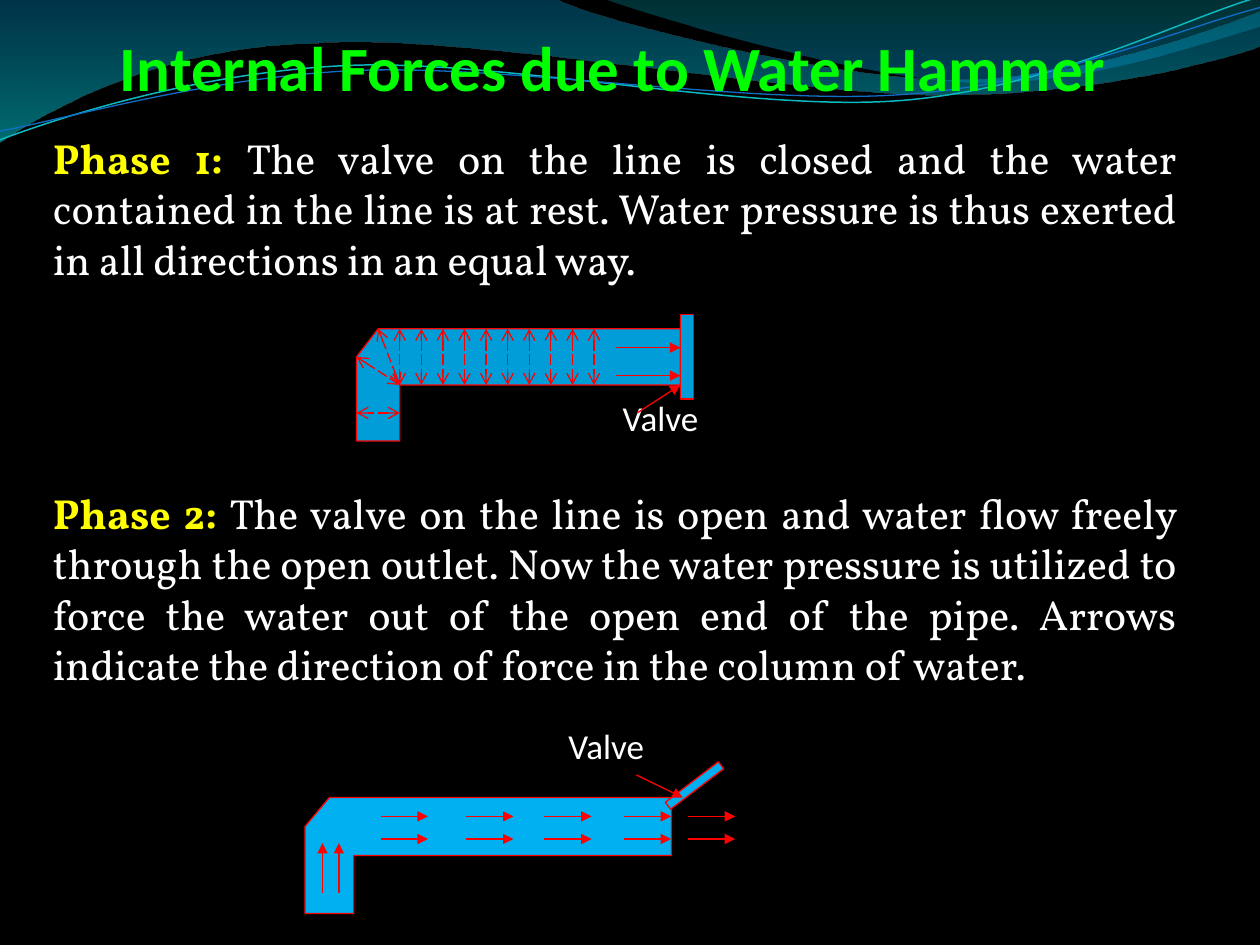
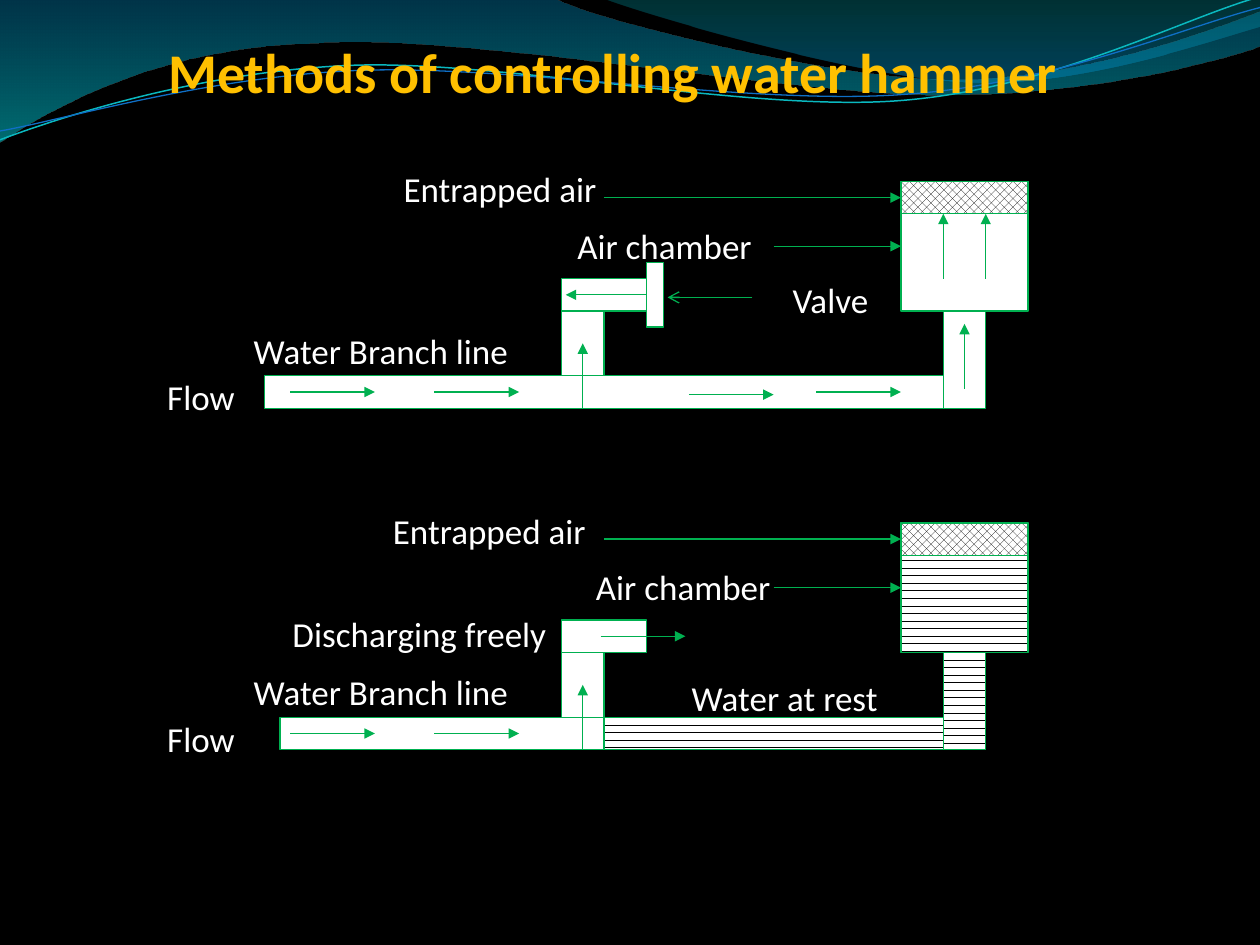
from dataclasses import dataclass

from pptx import Presentation
from pptx.dml.color import RGBColor
from pptx.enum.dml import MSO_LINE, MSO_PATTERN
from pptx.enum.shapes import MSO_CONNECTOR, MSO_SHAPE
from pptx.enum.text import MSO_ANCHOR, PP_ALIGN
from pptx.oxml.ns import qn
from pptx.oxml.xmlchemy import OxmlElement
from pptx.util import Inches, Pt

RECT = MSO_SHAPE.RECTANGLE
STRAIGHT = MSO_CONNECTOR.STRAIGHT
LONG_DASH = MSO_LINE.LONG_DASH
AIR, WATER = MSO_PATTERN.PERCENT_50, MSO_PATTERN.DASHED_HORIZONTAL
CENTER, JUSTIFY = PP_ALIGN.CENTER, PP_ALIGN.JUSTIFY
TOP, BOTTOM = MSO_ANCHOR.TOP, MSO_ANCHOR.BOTTOM
LEFT_SIDE = 1

COLORS = {
    "black": "000000", "white": "FFFFFF", "yellow": "FFFF00",
    "lime": "00FF00", "amber": "FFC000", "red": "FF0000", "green": "00B050",
    "closed": "009DD9", "open": "00B0F0", "cyan": "0AB8BF", "blue": "0F6FC6",
    "sea": "0074A1", "aqua": "00C6CF", "teal": "00A1A9", "deep": "008BBF",
}
SANS, SERIF = "Calibri", "Vollkorn"

# Wave outlines: two numbers are a straight step, six a cubic curve.
BROAD_WAVE = [(0, 0), (4.4, -0.01), (4.76, 0.17, 6.64, 0.63, 7.58, 0.63),
              (8.53, 0.63, 9.58, 0.26, 10, 0.09), (10.01, 0.36),
              (9.83, 0.44, 8.7, 0.76, 7.46, 0.75),
              (6.22, 0.75, 3.82, 0.28, 2.57, 0.34),
              (1.29, 0.36, 0.46, 0.83, -0.01, 1.13), (0, 0)]
RIGHT_WAVE = [(4.79, -0.01), (5.09, 0.11, 6.82, 0.62, 7.69, 0.65),
              (8.56, 0.69, 9.61, 0.32, 10, 0.21), (10, 0), (4.79, -0.01)]
CYAN_LINE = [(0, 1.11), (0.48, 0.93, 1.58, 0.57, 2.77, 0.52),
             (3.95, 0.47, 5.93, 0.89, 7.13, 0.8),
             (8.33, 0.71, 9.38, 0.15, 9.98, -0.02)]
BLUE_LINE = [(0, 1.04), (0.47, 0.96, 1.64, 0.61, 2.83, 0.56),
             (4.03, 0.51, 5.97, 0.84, 7.17, 0.75),
             (8.36, 0.67, 9.41, 0.21, 10, 0.06)]


@dataclass
class Grid:
    """A box in inches, divided into equal columns and rows."""
    x: float
    y: float
    w: float
    h: float
    cols: float
    rows: float

    def point(self, col, row):
        return (Inches(self.x + col * self.w / self.cols),
                Inches(self.y + row * self.h / self.rows))

    def area(self, col, row, cols, rows):
        return (*self.point(col, row),
                Inches(cols * self.w / self.cols), Inches(rows * self.h / self.rows))


PAGE = Grid(0, 0, 10, 7.5, 10, 7.5)


def rgb(name):
    return RGBColor.from_string(COLORS[name])


def paint(sp, fill=None, line=None, pattern=None, width=0.75):
    sp.shadow.inherit = False
    if pattern is not None:
        sp.fill.patterned()
        sp.fill.pattern = pattern
        sp.fill.fore_color.rgb, sp.fill.back_color.rgb = rgb("black"), rgb("white")
    elif fill:
        sp.fill.solid()
        sp.fill.fore_color.rgb = rgb(fill)
    else:
        sp.fill.background()
    if line:
        sp.line.color.rgb = rgb(line)
        sp.line.width = Pt(width)
    else:
        sp.line.fill.background()
    return sp


def block(s, grid, area, fill, line, pattern=None):
    sp = s.shapes.add_shape(RECT, *grid.area(*area))
    return paint(sp, fill, line, pattern)


def outline(s, grid, points, close=True):
    pts = [grid.point(*p) for p in points]
    fb = s.shapes.build_freeform(*pts[0])
    fb.add_line_segments(pts[1:], close=close)
    return fb.convert_to_shape()


def curved_outline(s, grid, segments, close):
    """Draw every point as a step, then join the steps of each curve in one."""
    points = [seg[i:i + 2] for seg in segments for i in range(0, len(seg), 2)]
    sp = outline(s, grid, points, close)
    steps = iter(list(sp._element.spPr.iter(qn("a:lnTo"))))
    for seg in segments[1:]:
        first = next(steps)
        if len(seg) == 6:
            curve = OxmlElement("a:cubicBezTo")
            first.addprevious(curve)
            for step in (first, next(steps), next(steps)):
                curve.append(step[0])
                step.getparent().remove(step)
    return sp


def arrow(s, grid, start, end, color, head=None, tail="triangle", dash=None):
    cx = s.shapes.add_connector(STRAIGHT, *grid.point(*start), *grid.point(*end))
    cx.line.color.rgb = rgb(color)
    cx.line.width = Pt(0.75)
    if dash is not None:
        cx.line.dash_style = dash
    ln = cx.line._get_or_add_ln()
    for tag, kind in (("a:headEnd", head), ("a:tailEnd", tail)):
        if kind:
            tip = OxmlElement(tag)
            tip.set("type", kind)
            ln.append(tip)
    cx._element.spPr.append(OxmlElement("a:effectLst"))
    return cx


def text_box(s, grid, area, anchor=TOP):
    tf = s.shapes.add_textbox(*grid.area(*area)).text_frame
    tf.word_wrap = True
    tf.vertical_anchor = anchor
    tf.margin_left = tf.margin_top = tf.margin_right = tf.margin_bottom = 0
    return tf


def add_run(p, text, size, color, font=SANS, bold=False):
    r = p.add_run()
    r.text = text
    r.font.name, r.font.size, r.font.bold = font, Pt(size), bold
    r.font.color.rgb = rgb(color)


def label(s, grid, text, mid, row, cols):
    """Write a label centred on column mid, with its top on a row."""
    tf = text_box(s, grid, (mid - cols / 2, row, cols, 0.36 * grid.rows / grid.h))
    tf.paragraphs[0].alignment = CENTER
    add_run(tf.paragraphs[0], text, 20, "white")


def waves(s, grid):
    for segments, stops in (
            (BROAD_WAVE, ((0, "sea", 45), (1, "aqua", 55))),
            (RIGHT_WAVE, ((0, "teal", 30), (0.8, "deep", 45)))):
        sp = paint(curved_outline(s, grid, segments, True))
        sp.fill.gradient()
        sp.fill.gradient_angle = 270
        for stop, (position, color, _) in zip(sp.fill.gradient_stops, stops):
            stop.position = position
            stop.color.rgb = rgb(color)
        for clr, (_, _, opacity) in zip(sp._element.spPr.iter(qn("a:srgbClr")), stops):
            alpha = OxmlElement("a:alpha")
            alpha.set("val", str(opacity * 1000))
            clr.append(alpha)
    for segments, color, width in ((CYAN_LINE, "cyan", 0.85), (BLUE_LINE, "blue", 0.75)):
        paint(curved_outline(s, grid, segments, False), line=color, width=width)


def dress_layout(s):
    """Give the slide's layout the black ground and the waves."""
    layout = s.slide_layout
    layout.background.fill.solid()
    layout.background.fill.fore_color.rgb = rgb("black")
    waves(s, PAGE)
    for sp in list(s.shapes):
        layout.shapes._spTree.append(sp._element)


def add_title(s, title, size, color):
    p = text_box(s, PAGE, (0.58, 0.08, 8.57, 0.75), BOTTOM).paragraphs[0]
    p.alignment = CENTER
    add_run(p, title, size, color, bold=True)


def phase_text(s, grid, area, phases):
    tf = text_box(s, grid, area)
    tf.margin_top, tf.margin_right = Inches(0.05), Inches(0.08)
    for i, (name, text) in enumerate(phases):
        p = tf.add_paragraph() if i else tf.paragraphs[0]
        p.alignment = JUSTIFY
        p.line_spacing = Pt(28.9)
        p.space_before = Pt(116 if i else 0)
        add_run(p, name, 24, "yellow", SERIF, True)
        add_run(p, text, 24, "white", SERIF)


def bent_pipe(s, grid, fill):
    corners = [(15, 0), (1, 0), (0, 1), (0, 4), (2, 4), (2, 2), (15, 2)]
    paint(outline(s, grid, corners), fill, "red")


def closed_pipe(s, grid):
    bent_pipe(s, grid, "closed")
    across = [((col, 0), (col, 2)) for col in range(2, 12)]
    across += [((1, 0), (2, 2)), ((0, 1), (2, 2)), ((2, 3), (0, 3))]
    for start, end in across:
        arrow(s, grid, start, end, "red", "arrow", "arrow", LONG_DASH)
    for row in (0.67, 1.67):
        arrow(s, grid, (12, row), (15, row), "red")
    block(s, grid, (15, -0.5, 0.6, 3), "closed", "red")
    label(s, grid, "Valve", 14.08, 2.4, 4)
    arrow(s, grid, (13, 3), (15, 2), "red")


def open_pipe(s, grid):
    bent_pipe(s, grid, "open")
    valve = block(s, grid, (15.76, -1.57, 0.36, 2.3), "open", "red")
    valve.rotation = 232.7
    label(s, grid, "Valve", 12.33, -2.52, 4.1)
    arrow(s, grid, (13.56, -0.78), (15.46, 0), "red")
    for col in (3.1, 6.6, 9.8, 13.05, 15.67):
        for row in (0.65, 1.43):
            arrow(s, grid, (col, row), (col + 1.93, row), "red")
    for col in (0.72, 1.39):
        arrow(s, grid, (col, 3.3), (col, 1.57), "red")


def branch_line(s, grid, main_pipe, water, labels):
    """Draw supply pipe, outlet and air chamber; water is the chamber's pattern."""
    chamber = block(s, grid, (15, 0, 3, 4), "white", "green", water)
    block(s, grid, (16, 4, 1, 3), "white", "green", water)
    for area in (main_pipe, (7, 4, 1, 2), (7, 3, 2, 1)):
        block(s, grid, area, "white", "green")
    air = block(s, grid, (15, 0, 3, 1), None, "green", AIR)
    for col, row in ((0.6, 6.5), (4, 6.5), (10, 6.58), (13, 6.5)):
        arrow(s, grid, (col, row), (col + 2, row), "green")
    arrow(s, grid, (7.5, 7), (7.5, 5), "green")
    for start, end, target in (((8, 0.5), (15, 0.5), air), ((12, 2), (15, 2), chamber)):
        arrow(s, grid, start, end, "green").end_connect(target, LEFT_SIDE)
    for words in labels + [("Water Branch line", 2.74, 4.57, 9), ("Flow", -1.5, 6, 3)]:
        label(s, grid, *words)


def closed_branch(s, grid):
    branch_line(s, grid, (0, 6, 16, 1), None,
                [("Entrapped air", 5.55, -0.43, 5.2), ("Air chamber", 9.43, 1.32, 5.1),
                 ("Valve", 13.34, 3, 3.2)])
    valve = block(s, grid, (9, 2.5, 0.4, 2), "white", "green")
    arrow(s, grid, (9, 3.5), (7.1, 3.5), "green").begin_connect(valve, LEFT_SIDE)
    arrow(s, grid, (11.5, 3.58), (9.5, 3.58), "green", tail="arrow")
    for start, end in (((16.5, 6.4), (16.5, 4.4)), ((16, 3), (16, 1)), ((17, 3), (17, 1))):
        arrow(s, grid, start, end, "green")


def open_branch(s, grid):
    branch_line(s, grid, (0.36, 6, 7.64, 1), WATER,
                [("Entrapped air", 5.3, -0.41, 5.7), ("Air chamber", 9.87, 1.32, 5.4),
                 ("Water at rest", 12.26, 4.74, 7.2),
                 ("Discharging freely", 3.65, 2.76, 6.9)])
    block(s, grid, (8, 6, 8, 1), None, "green", WATER)
    arrow(s, grid, (7.92, 3.5), (9.92, 3.5), "green")


def main():
    prs = Presentation()
    prs.slide_width, prs.slide_height = Inches(PAGE.w), Inches(PAGE.h)
    blank = prs.slide_layouts[6]

    s = prs.slides.add_slide(blank)
    dress_layout(s)
    add_title(s, "Internal Forces due to Water Hammer", 36, "lime")
    phase_text(s, PAGE, (0.42, 1, 9, 6.33), [
        ("Phase 1: ", "The valve on the line is closed and the water contained in the "
         "line is at rest. Water pressure is thus exerted in all directions in an "
         "equal way."),
        ("Phase 2: ", "The valve on the line is open and water flow freely through the "
         "open outlet. Now the water pressure is utilized to force the water out of "
         "the open end of the pipe. Arrows indicate the direction of force in the "
         "column of water."),
    ])
    closed_pipe(s, Grid(2.83, 2.61, 2.57, 0.89, 15, 4))
    open_pipe(s, Grid(2.42, 6.33, 2.91, 0.92, 15, 4))

    s = prs.slides.add_slide(blank)
    add_title(s, "Methods of controlling water hammer", 32, "amber")
    closed_branch(s, Grid(2.1, 1.44, 6.06, 1.8, 18, 7))
    open_branch(s, Grid(2.1, 4.15, 6.06, 1.8, 18, 7))

    prs.save("out.pptx")


if __name__ == "__main__":
    main()
